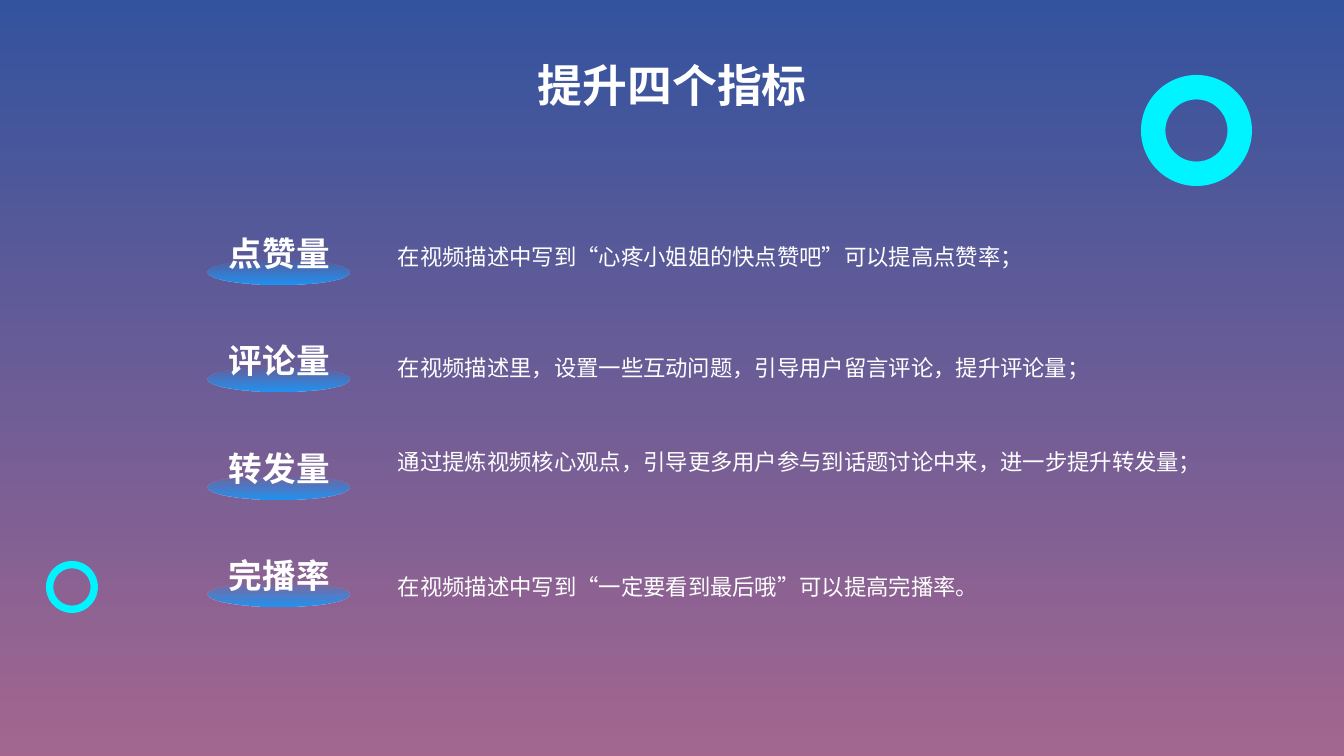
from lxml import etree
from pptx import Presentation
from pptx import util as u
from pptx.dml.color import RGBColor
from pptx.enum import lang, shapes, text
from pptx.oxml.ns import qn

FONT = "Noto Sans CJK SC"
WHITE = RGBColor(0xFF, 0xFF, 0xFF)
CYAN = RGBColor(0x00, 0xF4, 0xFF)
GLOW_BLUE = RGBColor(0x1D, 0x95, 0xF5)
SKY_BLUE = RGBColor(0x33, 0x53, 0x9E)
DUSK_PINK = RGBColor(0xA3, 0x66, 0x8F)
EMU_PER_PX = 914400 / 100.8


def px(value):
    return u.Emu(round(value * EMU_PER_PX))


class MetricsSlide:
    def __init__(self, deck):
        title_only = deck.slide_layouts[5]
        self.slide = deck.slides.add_slide(title_only)

    def vertical_gradient(self, fill, top, bottom):
        fill.gradient()
        fill.gradient_angle = 270
        for stop, colour, position in zip(fill.gradient_stops, (top, bottom), (0, 1)):
            stop.color.rgb = colour
            stop.position = position

    def background(self, top, bottom):
        self.vertical_gradient(self.slide.background.fill, top, bottom)

    def set_words(self, frame, words, size, bold=False, wrap=True, align=text.PP_ALIGN.LEFT):
        frame.word_wrap = wrap
        frame.auto_size = text.MSO_AUTO_SIZE.NONE
        frame.vertical_anchor = text.MSO_ANCHOR.MIDDLE
        paragraph = frame.paragraphs[0]
        paragraph.alignment = align
        run = paragraph.add_run()
        run.text = words
        font = run.font
        font.name, font.size, font.bold = FONT, u.Pt(size), bold
        font.color.rgb = WHITE
        font.language_id = lang.MSO_LANGUAGE_ID.SIMPLIFIED_CHINESE
        # East Asian typeface follows the Latin one
        latin = run._r.get_or_add_rPr().find(qn("a:latin"))
        east_asian = etree.Element(qn("a:ea"), typeface=FONT)
        latin.addnext(east_asian)

    def title(self, words, left, top, width, height):
        heading = self.slide.shapes.title
        heading.left, heading.top = px(left), px(top)
        heading.width, heading.height = px(width), px(height)
        self.set_words(heading.text_frame, words, 32, bold=True, align=text.PP_ALIGN.CENTER)

    def ring(self, left, top, size, thickness):
        ring = self.slide.shapes.add_shape(
            shapes.MSO_SHAPE.DONUT, px(left), px(top), px(size), px(size))
        ring.adjustments[0] = thickness
        ring.shadow.inherit = False
        ring.fill.solid()
        ring.fill.fore_color.rgb = CYAN
        ring.line.fill.background()

    def metric_label(self, words, top):
        group = self.slide.shapes.add_group_shape()
        glow = group.shapes.add_shape(
            shapes.MSO_SHAPE.OVAL, px(208), px(top + 32), px(142), px(25))
        glow.shadow.inherit = False
        glow.line.fill.background()
        self.vertical_gradient(glow.fill, GLOW_BLUE, GLOW_BLUE)
        # The glow fades out towards the top
        upper_colour = next(glow._element.spPr.iter(qn("a:srgbClr")))
        etree.SubElement(upper_colour, qn("a:alpha"), val="0")
        label = group.shapes.add_textbox(px(219), px(top), px(122), px(50))
        self.set_words(label.text_frame, words, 24, bold=True, wrap=False)

    def advice(self, words, top, width):
        advice = self.slide.shapes.add_textbox(px(388), px(top), px(width), px(37))
        self.set_words(advice.text_frame, words, 16)


METRICS = [
    # label, advice, advice top, advice width
    ("点赞量", "在视频描述中写到“心疼小姐姐的快点赞吧”可以提高点赞率；", 238, 790),
    ("评论量", "在视频描述里，设置一些互动问题，引导用户留言评论，提升评论量；", 349, 709),
    ("转发量", "通过提炼视频核心观点，引导更多用户参与到话题讨论中来，进一步提升转发量；", 443, 812),
    ("完播率", "在视频描述中写到“一定要看到最后哦”可以提高完播率。", 568, 790),
]
FIRST_LABEL_TOP = 228
LABEL_PITCH = 107.4


def main():
    deck = Presentation()
    deck.slide_width, deck.slide_height = px(1344), px(756)
    page = MetricsSlide(deck)

    # Backdrop and title
    page.background(SKY_BLUE, DUSK_PINK)
    page.title("提升四个指标", 491, 52, 363, 65)

    # Decorative rings
    page.ring(1141, 75, 111, 0.22)
    page.ring(46, 561, 52, 0.14)

    # Four metrics with their advice
    for row, (label, advice, advice_top, advice_width) in enumerate(METRICS):
        page.metric_label(label, round(FIRST_LABEL_TOP + row * LABEL_PITCH))
        page.advice(advice, advice_top, advice_width)

    deck.save("out.pptx")


if __name__ == "__main__":
    main()
